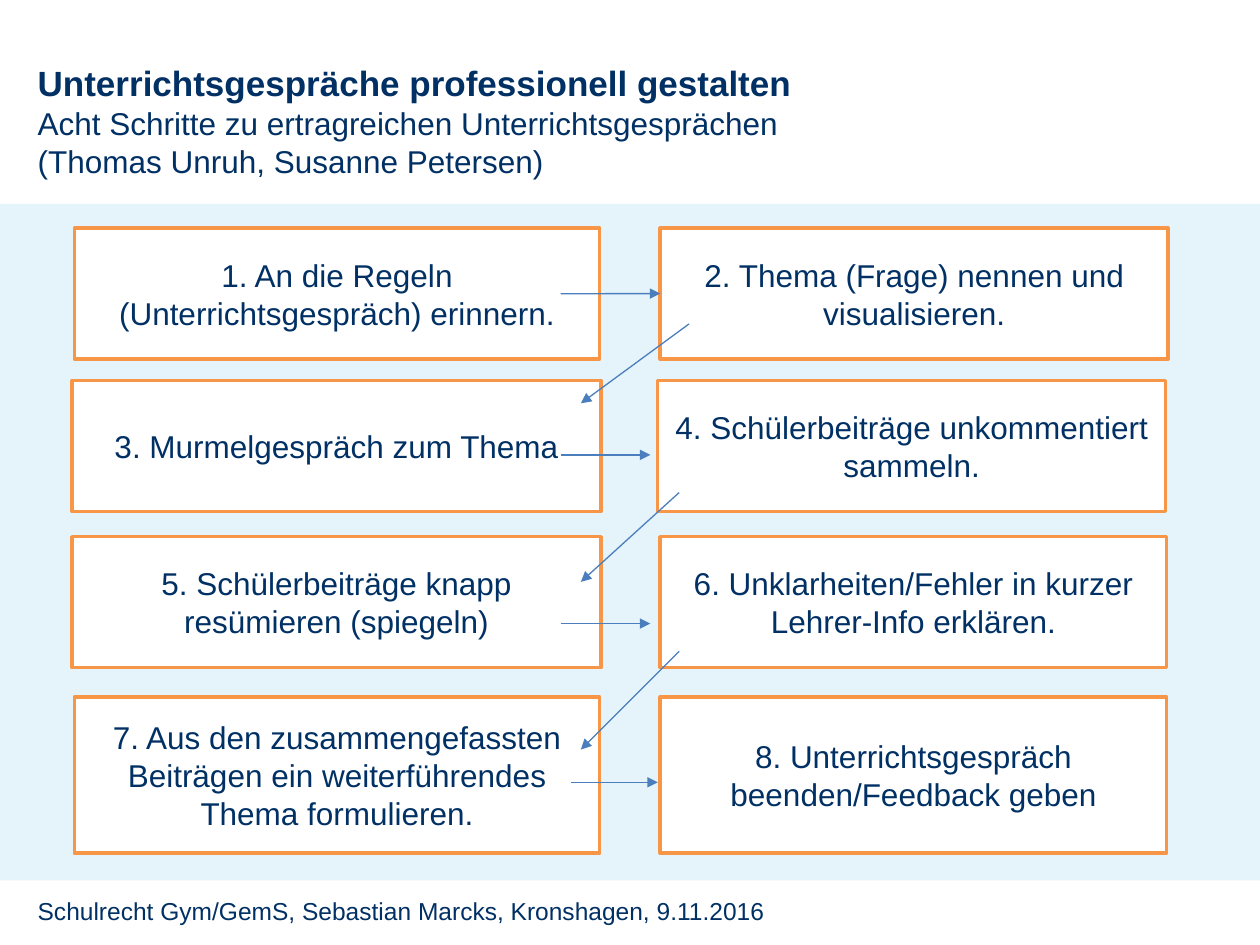
from pptx import Presentation
from pptx.dml.color import RGBColor
from pptx.enum.shapes import MSO_CONNECTOR, MSO_SHAPE
from pptx.enum.text import MSO_ANCHOR, PP_ALIGN
from pptx.oxml.ns import qn
from pptx.util import Cm, Pt
from lxml.etree import SubElement

NAVY = RGBColor(0x00, 0x30, 0x64)
SKY = RGBColor(0x00, 0x8C, 0xCF)
ORANGE = RGBColor(0xF7, 0x96, 0x46)
BLUE = RGBColor(0x4B, 0x7E, 0xBC)
WHITE = RGBColor(0xFF, 0xFF, 0xFF)


def add_run(paragraph, text, size, bold=False):
    run = paragraph.add_run()
    run.text = text
    run.font.name = "Arial"
    run.font.size = Pt(size)
    run.font.bold = bold
    run.font.color.rgb = NAVY


presentation = Presentation()
presentation.slide_width = Cm(25.4)
presentation.slide_height = Cm(19.05)
slide = presentation.slides.add_slide(presentation.slide_layouts[6])

band = slide.shapes.add_shape(MSO_SHAPE.RECTANGLE, 0, Cm(4.11), Cm(25.4), Cm(13.64))
band.shadow.inherit = False
band.fill.solid()
band.fill.fore_color.rgb = SKY
band.line.fill.background()
band_color = band.fill._xPr.find(qn("a:solidFill"))[0]
SubElement(band_color, qn("a:alpha"), val="10000")

footer = slide.shapes.add_textbox(Cm(0.51), Cm(17.93), Cm(21.79), Cm(1.32))
footer.text_frame.word_wrap = True
add_run(footer.text_frame.paragraphs[0],
        "Schulrecht Gym/GemS, Sebastian Marcks, Kronshagen, 9.11.2016", 14)

title = slide.shapes.add_textbox(Cm(0.51), Cm(1.12), Cm(16.61), Cm(2.64))
title.text_frame.word_wrap = True
add_run(title.text_frame.paragraphs[0],
        "Unterrichtsgespräche professionell gestalten", 20, True)
add_run(title.text_frame.add_paragraph(),
        "Acht Schritte zu ertragreichen Unterrichtsgesprächen "
        "(Thomas Unruh, Susanne Petersen)", 18)

steps = [
    (1.5, 4.6, 10.59, 2.64, "1. An die Regeln (Unterrichtsgespräch) erinnern."),
    (13.31, 4.6, 10.24, 2.64, "2. Thema (Frage) nennen und visualisieren."),
    (1.45, 7.67, 10.67, 2.64, "3. Murmelgespräch zum Thema"),
    (13.26, 7.67, 10.24, 2.64, "4. Schülerbeiträge unkommentiert sammeln."),
    (1.45, 10.82, 10.67, 2.64, "5. Schülerbeiträge knapp resümieren (spiegeln)"),
    (13.31, 10.82, 10.21, 2.64, "6. Unklarheiten/Fehler in kurzer Lehrer-Info erklären."),
    (1.5, 14.05, 10.59, 3.15,
     "7. Aus den zusammengefassten Beiträgen ein weiterführendes Thema formulieren."),
    (13.31, 14.05, 10.21, 3.15, "8. Unterrichtsgespräch beenden/Feedback geben"),
]
boxes = []
for left, top, width, height, text in steps:
    box = slide.shapes.add_shape(
        MSO_SHAPE.FLOWCHART_PROCESS, Cm(left), Cm(top), Cm(width), Cm(height))
    box.shadow.inherit = False
    box.fill.solid()
    box.fill.fore_color.rgb = WHITE
    box.line.color.rgb = ORANGE
    box.line.width = Pt(2)
    box.text_frame.word_wrap = True
    box.text_frame.vertical_anchor = MSO_ANCHOR.MIDDLE
    paragraph = box.text_frame.paragraphs[0]
    paragraph.alignment = PP_ALIGN.CENTER
    add_run(paragraph, text, 18)
    boxes.append(box)

arrow_ends = [
    (11.3, 5.92, 13.31, 5.92),
    (13.89, 6.53, 11.71, 8.13),
    (11.3, 9.17, 13.11, 9.17),
    (13.69, 9.93, 11.71, 11.73),
    (11.3, 12.57, 13.11, 12.57),
    (13.69, 13.13, 11.71, 15.11),
    (11.51, 15.77, 13.26, 15.77),
]
arrows = []
for ends in arrow_ends:
    arrow = slide.shapes.add_connector(
        MSO_CONNECTOR.STRAIGHT, *[Cm(value) for value in ends])
    arrow.line.color.rgb = BLUE
    arrow.line.width = Pt(0.75)
    SubElement(arrow.line._get_or_add_ln(), qn("a:tailEnd"), type="triangle")
    SubElement(arrow._element.spPr, qn("a:effectLst"))
    arrows.append(arrow)
arrows[0].end_connect(boxes[1], 1)

presentation.save("out.pptx")
